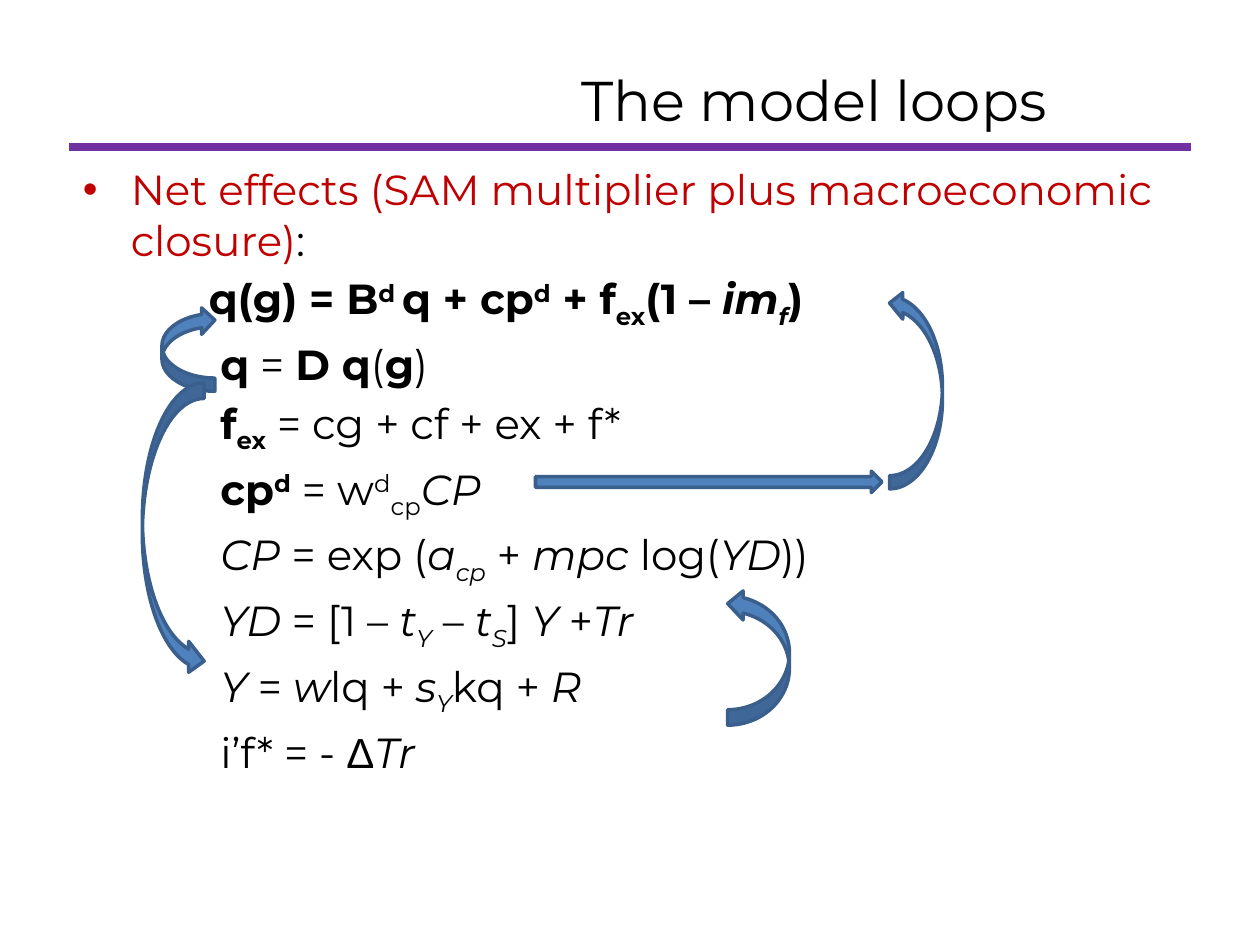
from dataclasses import dataclass

from lxml import etree
from pptx import Presentation
from pptx.dml.color import RGBColor
from pptx.enum.shapes import MSO_CONNECTOR, MSO_SHAPE
from pptx.enum.text import MSO_ANCHOR, PP_ALIGN
from pptx.oxml.ns import qn
from pptx.util import Inches, Pt

STRAIGHT = MSO_CONNECTOR.STRAIGHT
CURVED_DOWN = MSO_SHAPE.CURVED_DOWN_ARROW
CURVED_RIGHT = MSO_SHAPE.CURVED_RIGHT_ARROW
CURVED_UP = MSO_SHAPE.CURVED_UP_ARROW
RIGHT_ARROW = MSO_SHAPE.RIGHT_ARROW
MIDDLE = MSO_ANCHOR.MIDDLE
CENTER = PP_ALIGN.CENTER


@dataclass(frozen=True)
class Theme:
    """Colours, fonts and type sizes of the slide."""

    black: RGBColor = RGBColor(0x00, 0x00, 0x00)
    red: RGBColor = RGBColor(0xC0, 0x00, 0x00)
    purple: RGBColor = RGBColor(0x70, 0x30, 0xA0)
    arrow_fill: RGBColor = RGBColor(0x4F, 0x81, 0xBD)
    arrow_line: RGBColor = RGBColor(0x3A, 0x5F, 0x8C)
    font: str = "Montserrat"
    symbol_font: str = "Arial"
    title_size: Pt = Pt(32)
    body_size: Pt = Pt(24)
    paragraph_gap: Pt = Pt(4.8)
    rule_width: Pt = Pt(4.5)
    arrow_line_width: Pt = Pt(2)


THEME = Theme()
BASELINES = {"^": "30000", "_": "-25000"}
BULLET_INDENT = 0.38
FIRST_INDENT = 1.0
EQUATION_INDENT = 1.09

EQUATIONS = [
    [("q(g) = B", "b"), ("d ", "b^"), ("q + cp", "b"), ("d", "b^"), (" + f", "b"),
     ("ex", "b_"), ("(1 – ", "b"), ("im", "bi"), ("f", "bi_"), (")", "b")],
    [("q", "b"), (" = ", ""), ("D q", "b"), ("(", ""), ("g", "b"), (")", "")],
    [("f", "b"), ("ex", "b_"), (" = cg + cf + ex + f*", "")],
    [("cp", "b"), ("d", "b^"), (" = w", ""), ("d", "^"), ("cp", "_"), ("CP", "i")],
    [("CP", "i"), (" = exp (", ""), ("a", "i"), ("cp", "i_"), (" + ", ""),
     ("mpc", "i"), (" log(", ""), ("YD", "i"), ("))", "")],
    [("YD", "i"), (" = [1 – ", ""), ("t", "i"), ("Y", "i_"), (" – ", ""),
     ("t", "i"), ("S", "i_"), ("] ", ""), ("Y", "i"), (" +", ""), ("Tr", "i")],
    [("Y", "i"), (" = ", ""), ("w", "i"), ("lq + ", ""), ("s", "i"), ("Y", "i_"),
     ("kq + ", ""), ("R", "i")],
    [("i’f* = - ", ""), ("Δ", "s"), ("Tr", "i")],
]

ARROWS = [
    (CURVED_DOWN, (1.16, 2.56, 0.67, 0.42), 270, ()),
    (CURVED_RIGHT, (1.13, 3.04, 0.49, 2.33), 0, ()),
    (CURVED_UP, (6.48, 2.88, 1.58, 0.42), 270, (0.25, 0.5, 0.25)),
    (CURVED_UP, (5.48, 4.97, 1.08, 0.49), 270, (0.25, 0.47, 0.25)),
    (RIGHT_ARROW, (4.25, 3.74, 2.75, 0.17), 0, ()),
]


def add_run(paragraph, text, style="", size=THEME.body_size, color=THEME.black):
    """Add a run; style letters: b bold, i italic, s symbol font, ^ raised, _ lowered."""
    run = paragraph.add_run()
    run.text = text
    values = {
        "name": THEME.symbol_font if "s" in style else THEME.font,
        "size": size,
        "bold": "b" in style,
        "italic": "i" in style,
    }
    for name, value in values.items():
        setattr(run.font, name, value)
    run.font.color.rgb = color
    for mark, baseline in BASELINES.items():
        if mark in style:
            run._r.get_or_add_rPr().set("baseline", baseline)


def add_text_frame(slide, box):
    """Add a wrapping text box and return its text frame."""
    frame = slide.shapes.add_textbox(*map(Inches, box)).text_frame
    frame.word_wrap = True
    return frame


def indent(paragraph, left, first=0.0):
    """Set the left margin and first-line indent of a paragraph."""
    properties = paragraph._p.get_or_add_pPr()
    properties.set("marL", str(Inches(left)))
    properties.set("indent", str(Inches(first)))
    return properties


def add_title(slide, box):
    """Add the centred slide title."""
    frame = add_text_frame(slide, box)
    frame.vertical_anchor = MIDDLE
    paragraph = frame.paragraphs[0]
    paragraph.alignment = CENTER
    add_run(paragraph, "The model loops", size=THEME.title_size)


def add_rule(slide, left, right, top):
    """Add the horizontal rule below the title."""
    ends = map(Inches, (left, top, right, top))
    rule = slide.shapes.add_connector(STRAIGHT, *ends)
    rule.line.color.rgb = THEME.purple
    rule.line.width = THEME.rule_width
    etree.SubElement(rule._element.spPr, qn("a:effectLst"))


def add_equations(slide, box):
    """Add the bulleted heading and the model equations."""
    frame = add_text_frame(slide, box)
    heading = frame.paragraphs[0]
    properties = indent(heading, BULLET_INDENT, -BULLET_INDENT)
    etree.SubElement(properties, qn("a:buFont")).set("typeface", THEME.symbol_font)
    etree.SubElement(properties, qn("a:buChar")).set("char", "•")
    add_run(heading, "Net effects (SAM multiplier plus macroeconomic closure)",
            color=THEME.red)
    add_run(heading, ":")
    for index, equation in enumerate(EQUATIONS):
        paragraph = frame.add_paragraph()
        indent(paragraph, EQUATION_INDENT if index else FIRST_INDENT)
        paragraph.space_before = THEME.paragraph_gap
        for text, style in equation:
            add_run(paragraph, text, style)


def add_arrow(slide, kind, box, rotation, adjustments):
    """Add one block arrow of a model loop."""
    arrow = slide.shapes.add_shape(kind, *map(Inches, box))
    arrow.rotation = rotation
    arrow.shadow.inherit = False
    for index, value in enumerate(adjustments):
        arrow.adjustments[index] = value
    arrow.fill.solid()
    arrow.fill.fore_color.rgb = THEME.arrow_fill
    arrow.line.color.rgb = THEME.arrow_line
    arrow.line.width = THEME.arrow_line_width


def main():
    """Build and save the slide."""
    presentation = Presentation()
    presentation.slide_width = Inches(10)
    presentation.slide_height = Inches(7.5)
    slide = presentation.slides.add_slide(presentation.slide_layouts[6])
    add_rule(slide, 0.55, 9.45, 1.17)
    add_title(slide, (2.75, 0.25, 7.42, 1.08))
    add_equations(slide, (0.56, 1.25, 8.88, 6.08))
    for arrow in ARROWS:
        add_arrow(slide, *arrow)
    presentation.save("out.pptx")


if __name__ == "__main__":
    main()
